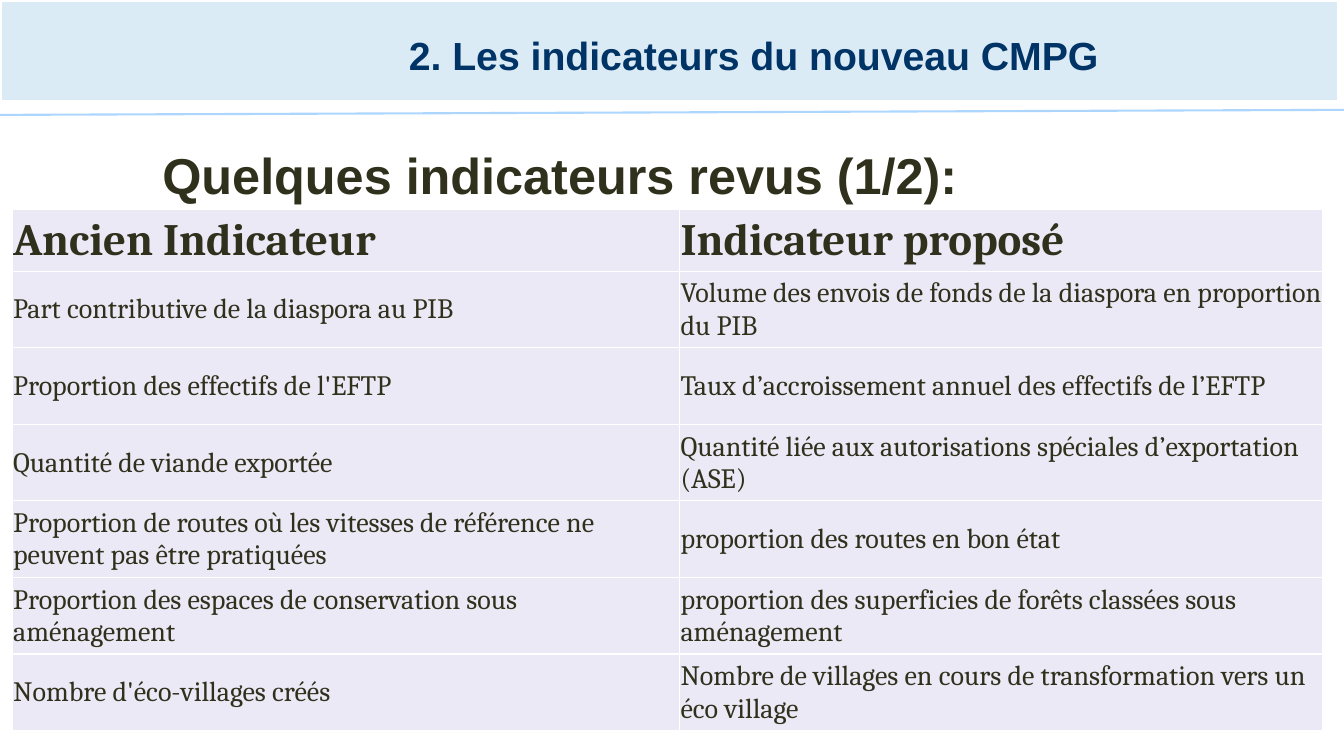
import pptx
import pptx.dml.color
import pptx.enum.shapes
import pptx.enum.text
import pptx.oxml
import pptx.oxml.ns
import pptx.util
from dataclasses import dataclass

Inches = pptx.util.Inches
Pt = pptx.util.Pt
Middle = pptx.enum.text.MSO_ANCHOR.MIDDLE
Center = pptx.enum.text.PP_ALIGN.CENTER

TITLE = "2. Les indicateurs du nouveau CMPG"
SUBTITLE = "Quelques indicateurs revus (1/2): "
INDICATORS = [
    ("Ancien Indicateur", "Indicateur proposé"),
    ("Part contributive de la diaspora au PIB",
     "Volume des envois de fonds de la diaspora en proportion du PIB"),
    ("Proportion des effectifs de l'EFTP",
     "Taux d’accroissement annuel des effectifs de l’EFTP"),
    ("Quantité de viande exportée",
     "Quantité liée aux autorisations spéciales d’exportation (ASE)"),
    ("Proportion de routes où les vitesses de référence ne peuvent pas être pratiquées",
     "proportion des routes en bon état"),
    ("Proportion des espaces de conservation sous aménagement",
     "proportion des superficies de forêts classées sous aménagement"),
    ("Nombre d'éco-villages créés",
     "Nombre de villages en cours de transformation vers un éco village"),
]
COLUMN_WIDTHS = (6.62, 6.38)
HEADER_HEIGHT = 0.61
ROW_HEIGHT = 0.76


@dataclass(frozen=True)
class Theme:
    heading_font: str = "Arial"
    table_font: str = "Cambria"
    white: str = "FFFFFF"
    band: str = "DBEBF5"
    rule: str = "ADD6FF"
    title: str = "003366"
    ink: str = "30311D"
    cell: str = "ECE9F6"
    title_size: int = 28
    subtitle_size: int = 36
    header_size: int = 32
    body_size: int = 20


theme = Theme()


def color(value):
    return pptx.dml.color.RGBColor.from_string(value)


def format_text(paragraph, name, size, ink, bold):
    for run in paragraph.runs:
        run.font.name = name
        run.font.size = Pt(size)
        run.font.bold = bold
        run.font.color.rgb = color(ink)


def add_heading(slide, text, box, size, ink):
    shape = slide.shapes.add_textbox(*map(Inches, box))
    frame = shape.text_frame
    frame.word_wrap = True
    frame.vertical_anchor = Middle
    frame.text = text
    paragraph = frame.paragraphs[0]
    paragraph.alignment = Center
    format_text(paragraph, theme.heading_font, size, ink, True)


def add_borders(cell):
    properties = cell._tc.get_or_add_tcPr()
    for position, side in enumerate(("lnL", "lnR", "lnT", "lnB")):
        properties.insert(position, pptx.oxml.parse_xml(
            f'<a:{side} {pptx.oxml.ns.nsdecls("a")} w="{Pt(1)}"><a:solidFill>'
            f'<a:srgbClr val="{theme.white}"/></a:solidFill></a:{side}>'))


def add_banner(slide):
    band = slide.shapes.add_shape(
        pptx.enum.shapes.MSO_SHAPE.RECTANGLE, 0, 0, Inches(13.28), Inches(1.01))
    band.shadow.inherit = False
    band.fill.solid()
    band.fill.fore_color.rgb = color(theme.band)
    band.line.color.rgb = color(theme.white)
    band.line.width = Pt(2.25)
    rule = slide.shapes.add_connector(
        pptx.enum.shapes.MSO_CONNECTOR.STRAIGHT,
        0, Inches(1.14), Inches(13.33), Inches(1.09))
    rule.line.color.rgb = color(theme.rule)
    rule.line.width = Pt(1.5)
    rule._element.spPr.append(pptx.oxml.parse_xml(
        f'<a:effectLst {pptx.oxml.ns.nsdecls("a")}/>'))


def add_indicator_table(slide):
    heights = [HEADER_HEIGHT] + [ROW_HEIGHT] * (len(INDICATORS) - 1)
    table = slide.shapes.add_table(
        len(INDICATORS), len(COLUMN_WIDTHS), Inches(0.12), Inches(2.08),
        Inches(sum(COLUMN_WIDTHS)), Inches(sum(heights))).table
    table.horz_banding = False
    for column, width in zip(table.columns, COLUMN_WIDTHS):
        column.width = Inches(width)
    for row_index, (texts, height) in enumerate(zip(INDICATORS, heights)):
        header = row_index == 0
        size = theme.header_size if header else theme.body_size
        table.rows[row_index].height = Inches(height)
        for cell, text in zip(table.rows[row_index].cells, texts):
            cell.margin_left = cell.margin_right = cell.margin_top = Inches(0.01)
            cell.margin_bottom = 0
            cell.vertical_anchor = Middle
            cell.fill.solid()
            cell.fill.fore_color.rgb = color(theme.cell)
            add_borders(cell)
            cell.text_frame.text = text
            format_text(cell.text_frame.paragraphs[0], theme.table_font,
                        size, theme.ink, header)


def main():
    presentation = pptx.Presentation()
    presentation.slide_width = Inches(13.33)
    presentation.slide_height = Inches(7.5)
    slide = presentation.slides.add_slide(presentation.slide_layouts[6])
    add_banner(slide)
    add_heading(slide, TITLE, (1.62, 0.1, 11.71, 0.89), theme.title_size, theme.title)
    add_heading(slide, SUBTITLE, (0.49, 1.37, 10.27, 0.71), theme.subtitle_size, theme.ink)
    add_indicator_table(slide)
    presentation.save("out.pptx")


if __name__ == "__main__":
    main()
